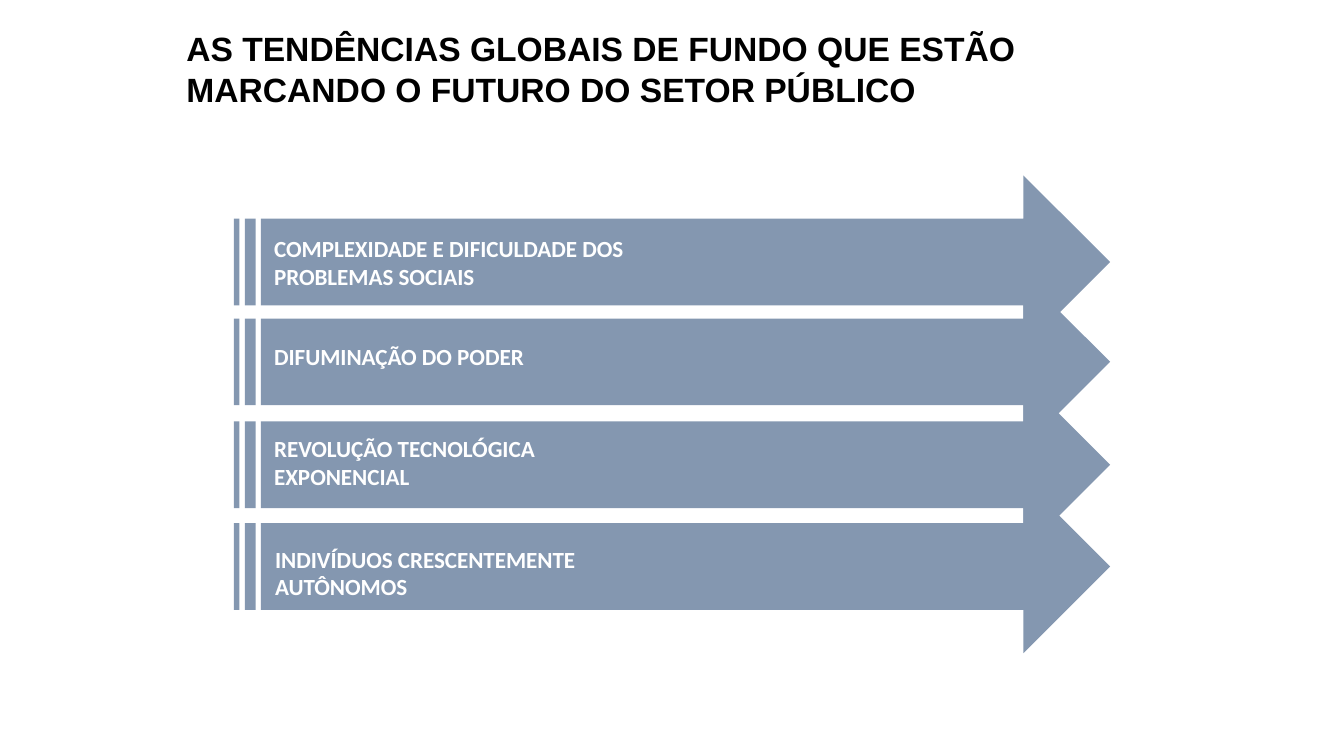
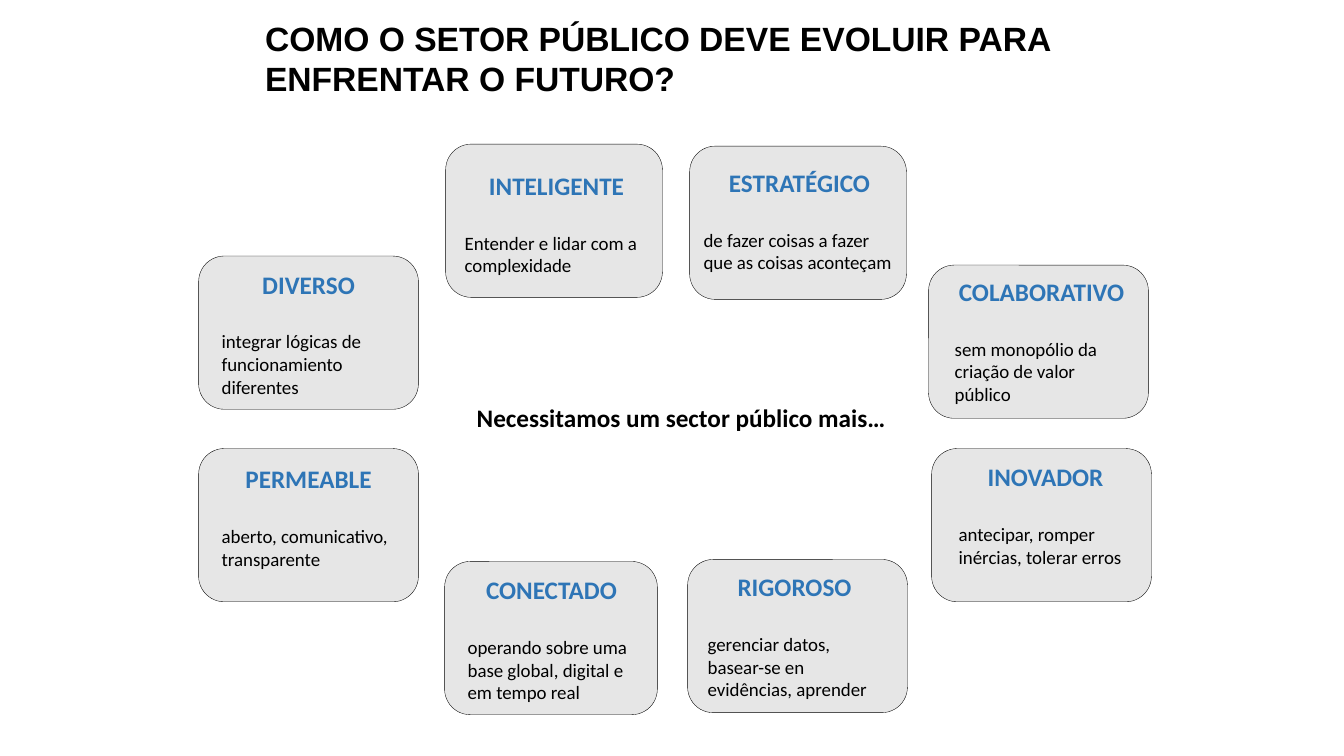
from dataclasses import dataclass

from pptx import Presentation
from pptx.dml.color import RGBColor
from pptx.enum import shapes, text
from pptx.util import Inches, Pt


@dataclass(frozen=True)
class Theme:
    black: str = "000000"
    white: str = "FFFFFF"
    arrow: str = "8497B0"
    card: str = "E6E6E6"
    accent: str = "2E75B6"
    title_font: str = "Arial"
    body_font: str = "Calibri"
    title_size: float = 24
    heading_size: float = 18
    label_size: float = 16.5
    detail_size: float = 13.5
    detail_gap: float = 22
    outline: float = 0.25


@dataclass(frozen=True)
class Box:
    left: float
    top: float
    width: float
    height: float

    def lengths(self):
        return [Inches(v) for v in (self.left, self.top, self.width, self.height)]


@dataclass(frozen=True)
class Trend:
    arrow_top: float
    label: str
    box: Box


@dataclass(frozen=True)
class Card:
    heading: str
    detail: str
    frame: Box
    body: Box


THEME = Theme()
ARROW_LEFT, ARROW_WIDTH, ARROW_HEIGHT = 2.32, 8.69, 1.72
CARD_HEIGHT = 1.52

TRENDS = [
    Trend(1.74, "COMPLEXIDADE E DIFICULDADE DOS PROBLEMAS SOCIAIS", Box(2.62, 2.28, 4.12, 0.66)),
    Trend(2.73, "DIFUMINAÇÃO DO PODER", Box(2.62, 3.35, 3.08, 0.38)),
    Trend(3.75, "REVOLUÇÃO TECNOLÓGICA EXPONENCIAL", Box(2.62, 4.26, 3.08, 0.66)),
    Trend(4.76, "INDIVÍDUOS CRESCENTEMENTE AUTÔNOMOS", Box(2.63, 5.36, 3.26, 0.66)),
]

CARDS = [
    Card("DIVERSO", "integrar lógicas de funcionamiento diferentes",
         Box(1.97, 2.54, 2.18, CARD_HEIGHT), Box(2.1, 2.62, 1.92, 1.39)),
    Card("INTELIGENTE", "Entender e lidar com a complexidade",
         Box(4.42, 1.43, 2.15, CARD_HEIGHT), Box(4.51, 1.64, 2.02, 1.16)),
    Card("ESTRATÉGICO", "de fazer coisas a fazer que as coisas aconteçam",
         Box(6.84, 1.45, 2.15, CARD_HEIGHT), Box(6.88, 1.61, 2.1, 1.16)),
    Card("COLABORATIVO", "sem monopólio da criação de valor público",
         Box(9.21, 2.63, 2.18, CARD_HEIGHT), Box(9.37, 2.69, 1.92, 1.39)),
    Card("INOVADOR", "antecipar, romper inércias, tolerar erros",
         Box(9.24, 4.45, 2.18, CARD_HEIGHT), Box(9.41, 4.53, 1.92, 1.16)),
    Card("RIGOROSO", "gerenciar datos, basear-se en evidências, aprender",
         Box(6.82, 5.55, 2.18, CARD_HEIGHT), Box(6.92, 5.62, 1.92, 1.39)),
    Card("CONECTADO", "operando sobre uma base global, digital e em tempo real",
         Box(4.41, 5.57, 2.11, CARD_HEIGHT), Box(4.54, 5.65, 1.86, 1.39)),
    Card("PERMEABLE", "aberto, comunicativo, transparente",
         Box(1.97, 4.45, 2.18, CARD_HEIGHT), Box(2.1, 4.55, 1.92, 1.16)),
]


def add_shape(s, kind, box: Box, fill: str, line: str | None = None):
    sp = s.shapes.add_shape(kind, *box.lengths())
    sp.shadow.inherit = False
    sp.fill.solid()
    sp.fill.fore_color.rgb = RGBColor.from_string(fill)
    if line:
        sp.line.color.rgb = RGBColor.from_string(line)
        sp.line.width = Pt(THEME.outline)
    else:
        sp.line.fill.background()
    return sp


def style(p, size: float, color: str, bold: bool = True, font: str = THEME.body_font) -> None:
    p.font.name = font
    p.font.size = Pt(size)
    p.font.bold = bold
    p.font.color.rgb = RGBColor.from_string(color)


def add_text(s, box: Box, words: str, size: float, color: str, font: str = THEME.body_font):
    """Add a wrapping text box with one bold paragraph and return its frame."""
    tf = s.shapes.add_textbox(*box.lengths()).text_frame
    tf.word_wrap = True
    tf.auto_size = text.MSO_AUTO_SIZE.SHAPE_TO_FIT_TEXT
    p = tf.paragraphs[0]
    p.text = words
    style(p, size, color, font=font)
    return tf


def add_slide(prs, title: str, box: Box):
    """Add a blank slide carrying the shared title style."""
    s = prs.slides.add_slide(prs.slide_layouts[6])
    add_text(s, box, title, THEME.title_size, THEME.black, THEME.title_font)
    return s


def add_card(s, card: Card) -> None:
    add_shape(s, shapes.MSO_SHAPE.ROUNDED_RECTANGLE, card.frame, THEME.card, THEME.black)
    tf = add_text(s, card.body, card.heading, THEME.heading_size, THEME.accent)
    tf.paragraphs[0].alignment = text.PP_ALIGN.CENTER
    p = tf.add_paragraph()
    p.text = card.detail
    p.space_before = Pt(THEME.detail_gap)
    style(p, THEME.detail_size, THEME.black, bold=False)


def build_trends(prs) -> None:
    s = add_slide(prs, "AS TENDÊNCIAS GLOBAIS DE FUNDO QUE ESTÃO MARCANDO O FUTURO DO SETOR PÚBLICO",
                  Box(1.75, 0.23, 9.51, 0.91))
    for trend in TRENDS:
        arrow = Box(ARROW_LEFT, trend.arrow_top, ARROW_WIDTH, ARROW_HEIGHT)
        add_shape(s, shapes.MSO_SHAPE.STRIPED_RIGHT_ARROW, arrow, THEME.arrow)
    for trend in TRENDS:
        add_text(s, trend.box, trend.label, THEME.label_size, THEME.white)


def build_evolution(prs) -> None:
    s = add_slide(prs, "COMO O SETOR PÚBLICO DEVE EVOLUIR PARA ENFRENTAR O FUTURO?",
                  Box(2.53, 0.13, 9.02, 0.91))
    for card in CARDS:
        add_card(s, card)
    add_text(s, Box(4.63, 3.94, 4.4, 0.4), "Necessitamos um sector público mais…",
             THEME.heading_size, THEME.black)


def main() -> None:
    prs = Presentation()
    prs.slide_width, prs.slide_height = Inches(13.33), Inches(7.5)
    build_trends(prs)
    build_evolution(prs)
    prs.save("out.pptx")


if __name__ == "__main__":
    main()
